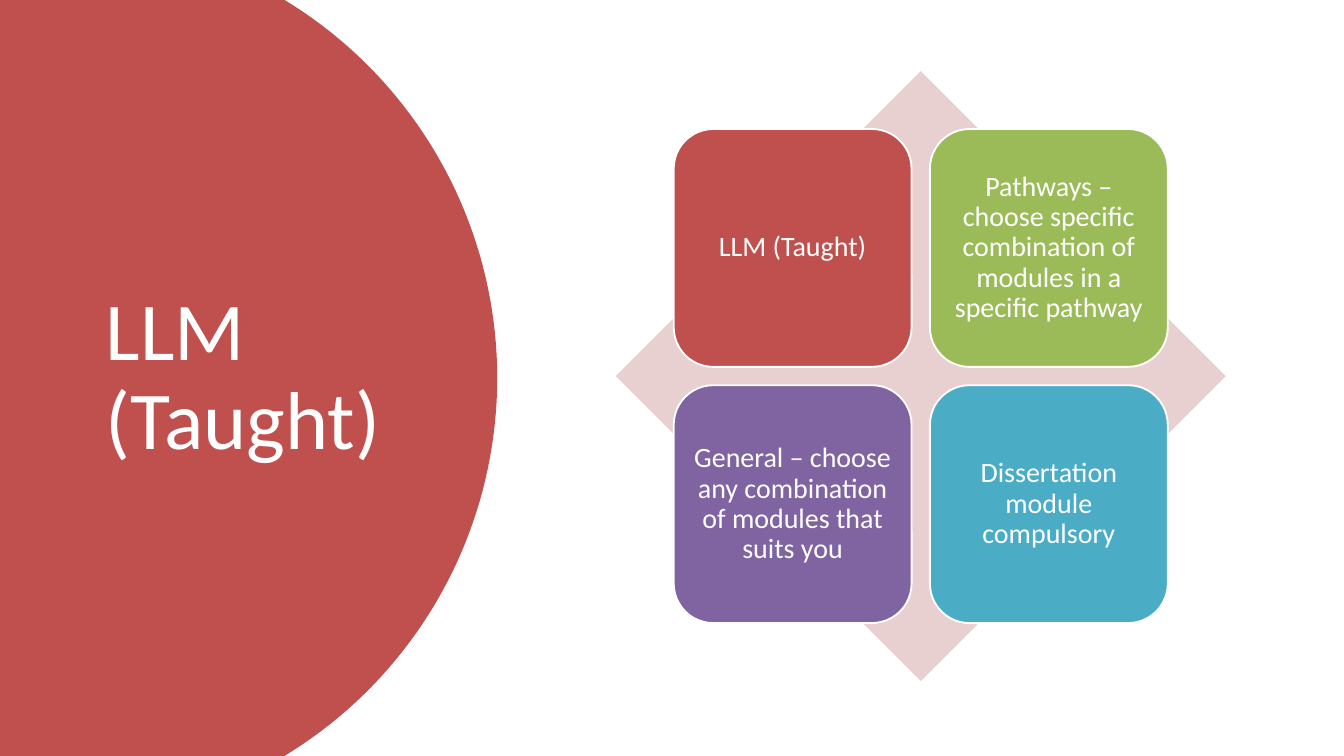
from dataclasses import dataclass
from math import asin, cos, sin

from pptx import Presentation
from pptx.dml.color import RGBColor as Rgb
from pptx.enum.shapes import MSO_SHAPE as Kind
from pptx.enum.text import MSO_ANCHOR as Anchor, PP_ALIGN as Align
from pptx.util import Pt


@dataclass(frozen=True)
class Theme:
    font: str = "Calibri"
    red: str = "C0504D"
    green: str = "9BBB59"
    purple: str = "8064A2"
    teal: str = "4BACC6"
    pink: str = "E8D0D0"
    white: str = "FFFFFF"
    title: float = 44
    body: float = 15


@dataclass(frozen=True)
class Tile:
    row: int
    col: int
    text: str
    fill: str


THEME = Theme()
WIDE, HIGH = 720, 405
SIDE, LEFT, TOP = 326.8, 329.9, 38.1
INSET, SIZE, STEP = 0.095 * SIDE, 0.39 * SIDE, 0.42 * SIDE
MID, RADIUS, PARTS = 29.5, 236.9, 80

TILES = [
    Tile(0, 0, "LLM (Taught)", THEME.red),
    Tile(0, 1, "Pathways – choose specific combination of modules in a specific pathway", THEME.green),
    Tile(1, 0, "General – choose any combination of modules that suits you", THEME.purple),
    Tile(1, 1, "Dissertation module compulsory", THEME.teal),
]


def paint(shape, fill: str) -> None:
    shape.shadow.inherit = False
    shape.fill.solid()
    shape.fill.fore_color.rgb = Rgb.from_string(fill)
    shape.line.fill.background()


def write(frame, text: str, size: float, align: Align) -> None:
    frame.word_wrap = True
    frame.vertical_anchor = Anchor.MIDDLE
    para = frame.paragraphs[0]
    para.alignment = align
    para.line_spacing = 0.9
    run = para.add_run()
    run.text = text
    run.font.name = THEME.font
    run.font.size = Pt(size)
    run.font.color.rgb = Rgb.from_string(THEME.white)


def draw_disc(slide) -> None:
    half = HIGH / 2
    limit = asin(half / RADIUS)
    turns = [limit * (2 * i / PARTS - 1) for i in range(PARTS + 1)]
    arc = [(Pt(MID + RADIUS * cos(t)), Pt(half + RADIUS * sin(t))) for t in turns]
    path = slide.shapes.build_freeform(0, 0)
    path.add_line_segments(arc + [(0, Pt(HIGH))], close=True)
    paint(path.convert_to_shape(), THEME.red)


def draw_title(slide) -> None:
    box = slide.shapes.add_textbox(Pt(49.5), Pt(38.1), Pt(174.2), Pt(329))
    write(box.text_frame, "LLM (Taught)", THEME.title, Align.LEFT)


def draw_tile(slide, tile: Tile) -> None:
    left = LEFT + INSET + tile.col * STEP
    top = TOP + INSET + tile.row * STEP
    shape = slide.shapes.add_shape(Kind.ROUNDED_RECTANGLE, Pt(left), Pt(top), Pt(SIZE), Pt(SIZE))
    paint(shape, tile.fill)
    shape.line.color.rgb = Rgb.from_string(THEME.white)
    shape.line.width = Pt(1)
    frame = shape.text_frame
    frame.margin_left = frame.margin_right = Pt(4.5)
    frame.margin_top = frame.margin_bottom = Pt(4.5)
    write(frame, tile.text, THEME.body, Align.CENTER)


def main() -> None:
    deck = Presentation()
    deck.slide_width, deck.slide_height = Pt(WIDE), Pt(HIGH)
    slide = deck.slides.add_slide(deck.slide_layouts[6])
    draw_disc(slide)
    draw_title(slide)
    paint(slide.shapes.add_shape(Kind.DIAMOND, Pt(LEFT), Pt(TOP), Pt(SIDE), Pt(SIDE)), THEME.pink)
    for tile in TILES:
        draw_tile(slide, tile)
    deck.save("out.pptx")


if __name__ == "__main__":
    main()
